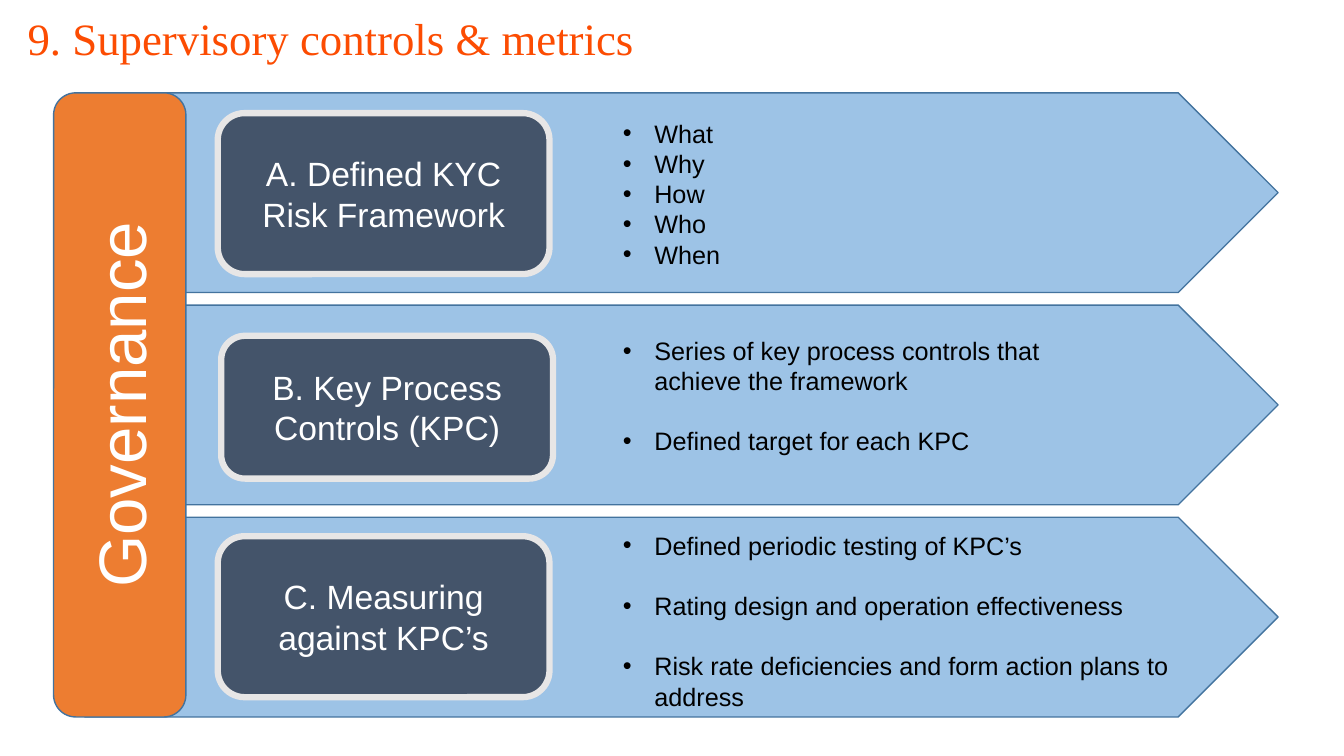
from lxml import etree
from pptx import Presentation
from pptx.dml.color import RGBColor
from pptx.enum import shapes, text
from pptx.oxml.ns import qn
from pptx.util import Pt

TITLE = "9. Supervisory controls & metrics"
PILLAR = "Governance"
# card text, card (left, inset from arrow top, height), list (inset, width, gap), points
ROWS = [
    ("A. Defined KYC Risk Framework", (155.5, 14.5, 115), (14.5, 282, 0),
     ["What", "Why", "How", "Who", "When"]),
    ("B. Key Process Controls (KPC)", (158, 22, 102), (18, 375, 21.5),
     ["Series of key process controls that achieve the framework",
      "Defined target for each KPC"]),
    ("C. Measuring against KPC’s", (155.5, 13.5, 115), (5.5, 408, 21.5),
     ["Defined periodic testing of KPC’s",
      "Rating design and operation effectiveness",
      "Risk rate deficiencies and form action plans to address"]),
]
HUES = {"title": "FC4C02", "arrow": "9DC3E6", "edge": "43739E", "card": "44546A",
        "rim": "E7E6E6", "pillar": "ED7D31", "white": "FFFFFF", "black": "000000"}

TOP, PITCH, HIGH = 66.3, 151.6, 142.6
ARROW_X, ARROW_W = 60.5, 852.5
CARD_W, LIST_X, LIST_H = 237, 437.8, 115
PILLAR_X, PILLAR_W = 38.3, 94.5
INDENT = 22.5
KIND = shapes.MSO_SHAPE


def hue(name):
    return RGBColor.from_string(HUES[name])


def style(par, size, color, face="Arial"):
    for run in par.runs:
        run.font.size = Pt(size)
        run.font.name = face
        run.font.color.rgb = hue(color)


def draw(home, kind, box, fill, line, width, label="", size=24):
    """Add a filled preset shape with an optional centred label."""
    shape = home.add_shape(kind, *map(Pt, box))
    shape.shadow.inherit = False
    shape.fill.solid()
    shape.fill.fore_color.rgb = hue(fill)
    shape.line.color.rgb = hue(line)
    shape.line.width = Pt(width)
    if label:
        frame = shape.text_frame
        frame.text = label
        frame.word_wrap = True
        frame.vertical_anchor = text.MSO_ANCHOR.MIDDLE
        frame.paragraphs[0].alignment = text.PP_ALIGN.CENTER
        style(frame.paragraphs[0], size, "white")
    return shape


def bullets(home, box, points, gap):
    frame = home.add_textbox(*map(Pt, box)).text_frame
    frame.word_wrap = True
    frame.text = "\n".join(points)
    for i, par in enumerate(frame.paragraphs):
        par.space_before = Pt(gap if i else 0)
        style(par, 18, "black")
        props = par._p.get_or_add_pPr()
        props.set("marL", str(Pt(INDENT)))
        props.set("indent", str(-Pt(INDENT)))
        etree.SubElement(props, qn("a:buFont"), typeface="Arial")
        etree.SubElement(props, qn("a:buChar"), char="•")


def main():
    deck = Presentation()
    deck.slide_width, deck.slide_height = Pt(960), Pt(540)
    slide = deck.slides.add_slide(deck.slide_layouts[5])

    title = slide.shapes.title
    title.left, title.top, title.width, title.height = map(Pt, (12.5, 11, 926, 36))
    frame = title.text_frame
    frame.text = TITLE
    frame.margin_top = frame.margin_bottom = 0
    frame.vertical_anchor = text.MSO_ANCHOR.MIDDLE
    head = frame.paragraphs[0]
    head.alignment = text.PP_ALIGN.LEFT
    head.line_spacing = 0.9
    style(head, 32, "title", "Times New Roman")

    for i, (label, (left, drop, tall), (inset, wide, gap), points) in enumerate(ROWS):
        top = TOP + i * PITCH
        home = slide.shapes.add_group_shape().shapes
        draw(home, KIND.PENTAGON, (ARROW_X, top, ARROW_W, HIGH), "arrow", "edge", 1)
        draw(home, KIND.ROUNDED_RECTANGLE, (left, top + drop, CARD_W, tall),
             "card", "rim", 4.5, label)
        bullets(home, (LIST_X, top + inset, wide, LIST_H), points, gap)

    # The pillar spans all rows; its box is laid flat, then turned about its centre.
    span = PITCH * (len(ROWS) - 1) + HIGH
    flat = (PILLAR_X + (PILLAR_W - span) / 2, TOP + (span - PILLAR_W) / 2, span, PILLAR_W)
    pillar = draw(slide.shapes, KIND.ROUNDED_RECTANGLE, flat, "pillar", "edge", 1, PILLAR, 48)
    pillar.rotation = 270

    deck.save("out.pptx")


if __name__ == "__main__":
    main()
